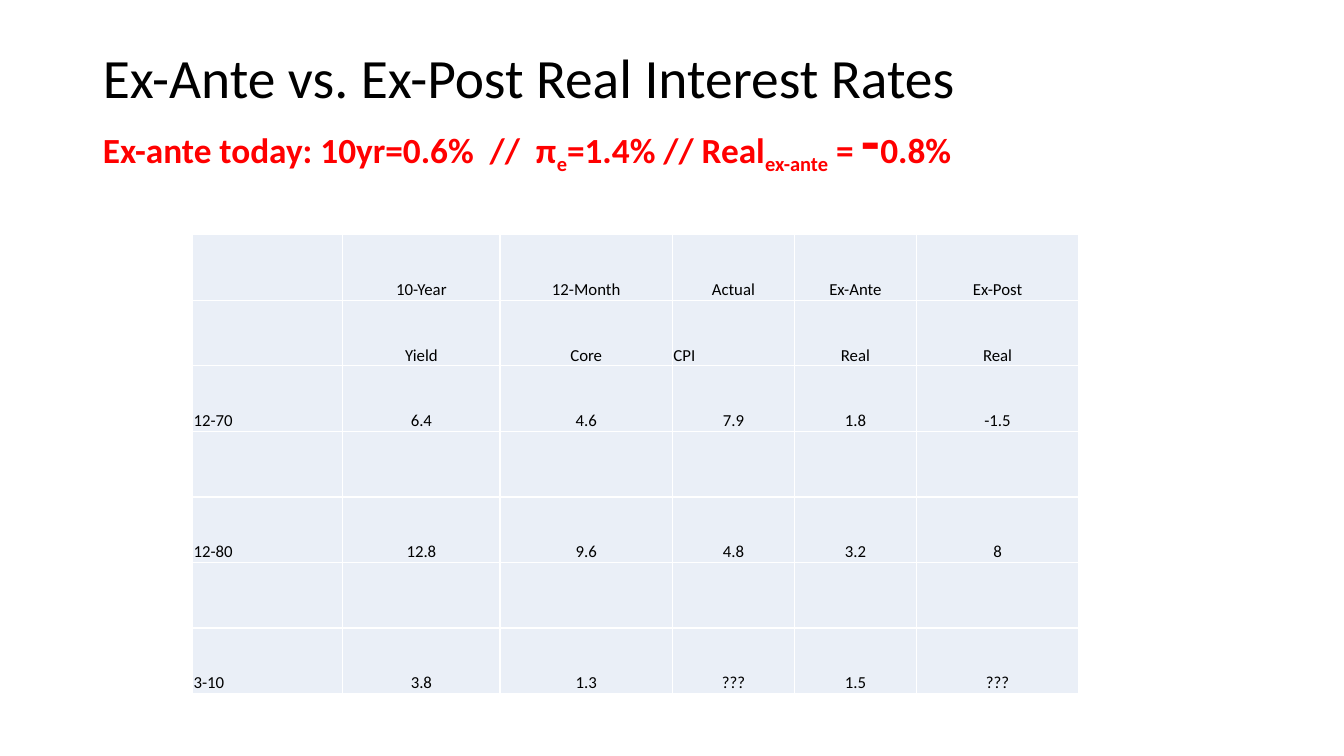
from lxml.etree import SubElement
from pptx import Presentation
from pptx.dml.color import RGBColor
from pptx.enum.text import MSO_ANCHOR, MSO_AUTO_SIZE, PP_ALIGN
from pptx.oxml.ns import qn
from pptx.util import Inches, Pt

# Content
TITLE = "Ex-Ante vs. Ex-Post Real Interest Rates"
RATES = [  # text, style
    ("Ex-ante today: 10yr=0.6%  //  π", "plain"),
    ("e", "sub"),
    ("=1.4% // Real", "plain"),
    ("ex-ante", "sub"),
    (" = ", "plain"),
    ("-", "minus"),
    ("0.8%", "plain"),
]
BLANK = [""] * 6
ROWS = [
    ["", "10-Year", "12-Month", "Actual", "Ex-Ante", "Ex-Post"],
    ["", "Yield", "Core", "CPI", "Real", "Real"],
    ["12-70", "6.4", "4.6", "7.9", "1.8", "-1.5"],
    BLANK,
    ["12-80", "12.8", "9.6", "4.8", "3.2", "8"],
    BLANK,
    ["3-10", "3.8", "1.3", "???", "1.5", "???"],
]
LEFT = {"CPI"}  # left-aligned outside the date column

# Theme and layout
THEME = {
    "font": "Calibri", "ink": "000000", "accent": "FF0000",
    "cell": "EAEFF7", "rule": "FFFFFF",
    "title": 39.6, "plain": 25.2, "sub": 25.2, "minus": 43.2, "table": 12,
}
SIZE = (13.33, 7.5)
HEAD = (0.92, 0.4, 11.5, 1.45)
GRID = (1.91, 2.33)
COLS = [1.49, 1.56, 1.71, 1.21, 1.21, 1.61]
ROW = 0.65


def color(name):
    return RGBColor.from_string(THEME[name])


def style(font, size, ink="ink", bold=False):
    font.name, font.size, font.bold = THEME["font"], Pt(THEME[size]), bold
    font.color.rgb = color(ink)


def border(cell):
    props = cell._tc.get_or_add_tcPr()
    for side in ("a:lnL", "a:lnR", "a:lnT", "a:lnB"):
        line = SubElement(props, qn(side), w=str(Pt(1)))
        fill = SubElement(line, qn("a:solidFill"))
        SubElement(fill, qn("a:srgbClr"), val=THEME["rule"])


def add_title(slide):
    title = slide.shapes.title
    title.left, title.top, title.width, title.height = map(Inches, HEAD)
    frame = title.text_frame
    frame.word_wrap = True
    frame.auto_size = MSO_AUTO_SIZE.NONE
    frame.vertical_anchor = MSO_ANCHOR.MIDDLE
    para = frame.paragraphs[0]
    para.alignment, para.line_spacing = PP_ALIGN.LEFT, 0.9
    run = para.add_run()
    run.text = TITLE
    style(run.font, "title")
    para.add_line_break()
    SubElement(para._p[-1], qn("a:rPr"), sz=str(round(THEME["title"] * 100)))
    for text, kind in RATES:
        run = para.add_run()
        run.text = text
        style(run.font, kind, "accent", True)
        if kind == "sub":
            run._r.get_or_add_rPr().set("baseline", "-25000")


def add_rates(slide):
    box = map(Inches, (*GRID, sum(COLS), ROW * len(ROWS)))
    table = slide.shapes.add_table(len(ROWS), len(COLS), *box).table
    table.first_row = table.horz_banding = False
    for col, width in zip(table.columns, COLS):
        col.width = Inches(width)
    for r, row in enumerate(ROWS):
        table.rows[r].height = Inches(ROW)
        for c, text in enumerate(row):
            cell = table.cell(r, c)
            border(cell)
            cell.fill.solid()
            cell.fill.fore_color.rgb = color("cell")
            cell.vertical_anchor = MSO_ANCHOR.BOTTOM
            cell.margin_left = cell.margin_right = cell.margin_top = Inches(0.01)
            cell.margin_bottom = 0
            cell.text = text
            para = cell.text_frame.paragraphs[0]
            left = c == 0 or text in LEFT
            para.alignment = PP_ALIGN.LEFT if left else PP_ALIGN.CENTER
            style(para.font, "table")


def main():
    deck = Presentation()
    deck.slide_width, deck.slide_height = map(Inches, SIZE)
    slide = deck.slides.add_slide(deck.slide_layouts[5])
    add_title(slide)
    add_rates(slide)
    deck.save("out.pptx")


if __name__ == "__main__":
    main()
